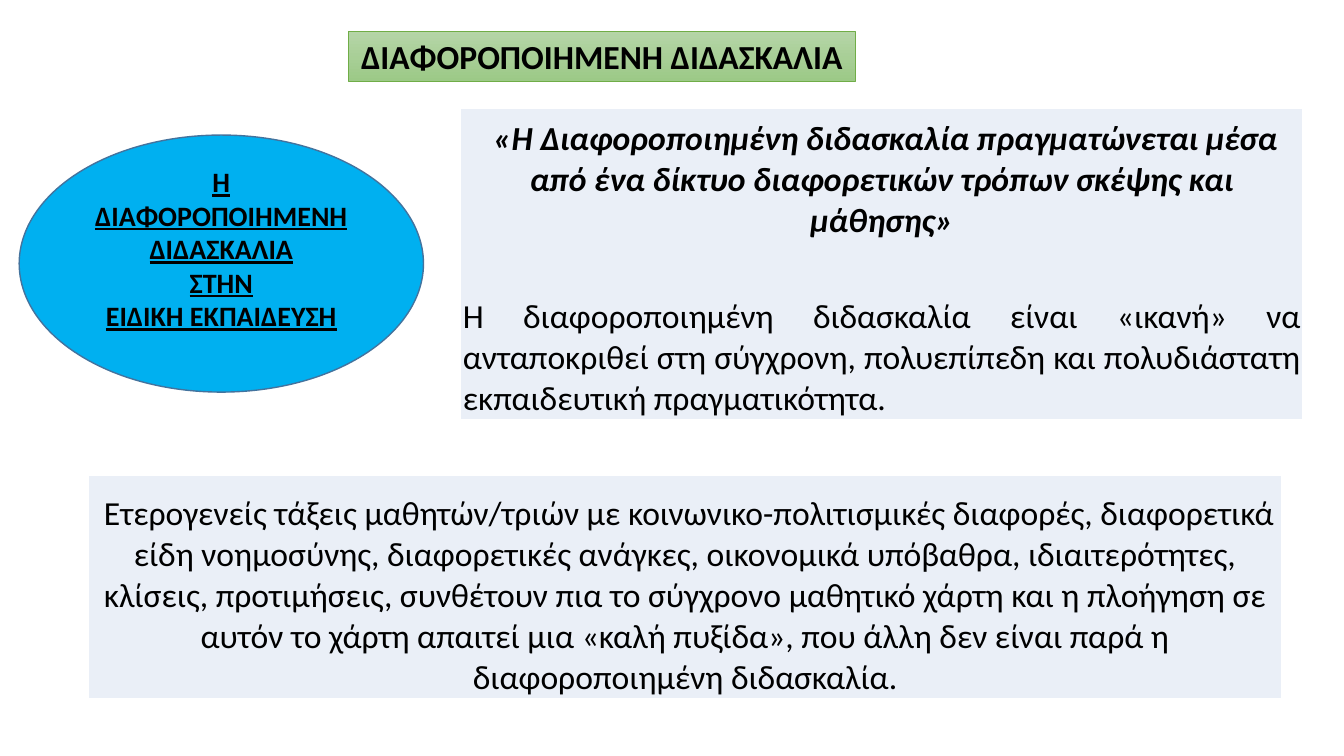
from dataclasses import dataclass

from lxml import etree
from pptx import Presentation
from pptx.dml.color import RGBColor as RGB
from pptx.enum.shapes import MSO_SHAPE as SHAPE
from pptx.enum.text import MSO_ANCHOR as ANCHOR, MSO_AUTO_SIZE as AUTO, PP_ALIGN as ALIGN
from pptx.oxml import parse_xml
from pptx.oxml.ns import nsdecls
from pptx.util import Inches, Pt


@dataclass(frozen=True)
class Theme:
    font: str = "Calibri"
    text_size: int = 24
    label_size: int = 20
    ink: str = "000000"
    panel: str = "EAEFF7"
    border: str = "FFFFFF"
    oval: str = "00B0F0"
    oval_line: str = "43739E"
    title_top: str = "B5D5A7"
    title_bottom: str = "9CC987"
    title_line: str = "70AD47"


THEME = Theme()


def color(code):
    return RGB.from_string(code)


def write(p, text, size=THEME.text_size, bold=False, italic=False,
          underline=False, align=ALIGN.CENTER, after=0):
    p.alignment = align
    p.space_after = Pt(after)
    r = p.add_run()
    r.text = text
    f = r.font
    f.name, f.size = THEME.font, Pt(size)
    f.bold, f.italic, f.underline = bold, italic, underline
    f.color.rgb = color(THEME.ink)


def write_all(tf, paragraphs):
    """Write (text, format) pairs as the paragraphs of a text frame."""
    for i, (text, fmt) in enumerate(paragraphs):
        p = tf.add_paragraph() if i else tf.paragraphs[0]
        write(p, text, **fmt)


def outline(shape, code, width):
    shape.line.color.rgb = color(code)
    shape.line.width = Pt(width)


def add_borders(cell, code, width):
    tc_pr = cell._tc.get_or_add_tcPr()
    for i, side in enumerate(("lnL", "lnR", "lnT", "lnB")):
        line = parse_xml(f'<a:{side} {nsdecls("a")} w="{Pt(width)}"/>')
        fill = etree.SubElement(line, line.tag.replace(side, "solidFill"))
        etree.SubElement(fill, line.tag.replace(side, "srgbClr"), val=code)
        tc_pr.insert(i, line)


class SlideBuilder:
    def __init__(self, prs, theme):
        self.theme = theme
        self.s = prs.slides.add_slide(prs.slide_layouts[5])

    def title(self, text, *box):
        sp = self.s.shapes.title
        sp.left, sp.top, sp.width, sp.height = map(Inches, box)
        sp.fill.gradient()
        sp.fill.gradient_angle = 270
        for stop, code in zip(sp.fill.gradient_stops,
                              (self.theme.title_top, self.theme.title_bottom)):
            stop.color.rgb = color(code)
        outline(sp, self.theme.title_line, 0.5)
        tf = sp.text_frame
        tf.word_wrap = False
        tf.auto_size = AUTO.NONE
        tf.vertical_anchor = ANCHOR.TOP
        write(tf.paragraphs[0], text, bold=True)

    def oval(self, lines, *box):
        sp = self.s.shapes.add_shape(SHAPE.OVAL, *map(Inches, box))
        sp.shadow.inherit = False
        sp.fill.solid()
        sp.fill.fore_color.rgb = color(self.theme.oval)
        outline(sp, self.theme.oval_line, 1)
        tf = sp.text_frame
        tf.word_wrap = True
        tf.vertical_anchor = ANCHOR.MIDDLE
        tf.margin_bottom = Inches(0.35)
        fmt = dict(size=self.theme.label_size, bold=True, underline=True)
        write_all(tf, [(line, fmt) for line in lines])

    def panel(self, paragraphs, *box):
        """Add a one-cell table with bottom-anchored text."""
        table = self.s.shapes.add_table(1, 1, *map(Inches, box)).table
        table.first_row = table.horz_banding = False
        cell = table.cell(0, 0)
        cell.fill.solid()
        cell.fill.fore_color.rgb = color(self.theme.panel)
        add_borders(cell, self.theme.border, 1)
        cell.vertical_anchor = ANCHOR.BOTTOM
        cell.margin_left = cell.margin_right = Inches(0.02)
        cell.margin_top = cell.margin_bottom = 0
        write_all(cell.text_frame, paragraphs)


def main():
    prs = Presentation()
    prs.slide_width, prs.slide_height = Inches(13.33), Inches(7.5)
    b = SlideBuilder(prs, THEME)
    b.title("ΔΙΑΦΟΡΟΠΟΙΗΜΕΝΗ ΔΙΔΑΣΚΑΛΙΑ", 3.46, 0.31, 5.02, 0.5)
    b.panel([
        (" «Η Διαφοροποιημένη διδασκαλία πραγματώνεται μέσα από ένα δίκτυο "
         "διαφορετικών τρόπων σκέψης και μάθησης»",
         dict(bold=True, italic=True, after=39)),
        ("Η διαφοροποιημένη διδασκαλία είναι «ικανή» να ανταποκριθεί στη "
         "σύγχρονη, πολυεπίπεδη και πολυδιάστατη εκπαιδευτική πραγματικότητα.",
         dict(align=ALIGN.JUSTIFY)),
    ], 4.57, 1.08, 8.35, 3.08)
    b.oval(["Η ΔΙΑΦΟΡΟΠΟΙΗΜΕΝΗ ΔΙΔΑΣΚΑΛΙΑ", "ΣΤΗΝ", "ΕΙΔΙΚΗ ΕΚΠΑΙΔΕΥΣΗ"],
           0.19, 1.34, 4.01, 2.55)
    b.panel([
        (" Ετερογενείς τάξεις μαθητών/τριών με κοινωνικο-πολιτισμικές διαφορές, "
         "διαφορετικά είδη νοημοσύνης, διαφορετικές ανάγκες, οικονομικά υπόβαθρα, "
         "ιδιαιτερότητες, κλίσεις, προτιμήσεις, συνθέτουν πια το σύγχρονο μαθητικό "
         "χάρτη και η πλοήγηση σε αυτόν το χάρτη απαιτεί μια «καλή πυξίδα», που "
         "άλλη δεν είναι παρά η διαφοροποιημένη διδασκαλία.", {}),
    ], 0.88, 4.72, 11.83, 2.21)
    prs.save("out.pptx")


if __name__ == "__main__":
    main()
